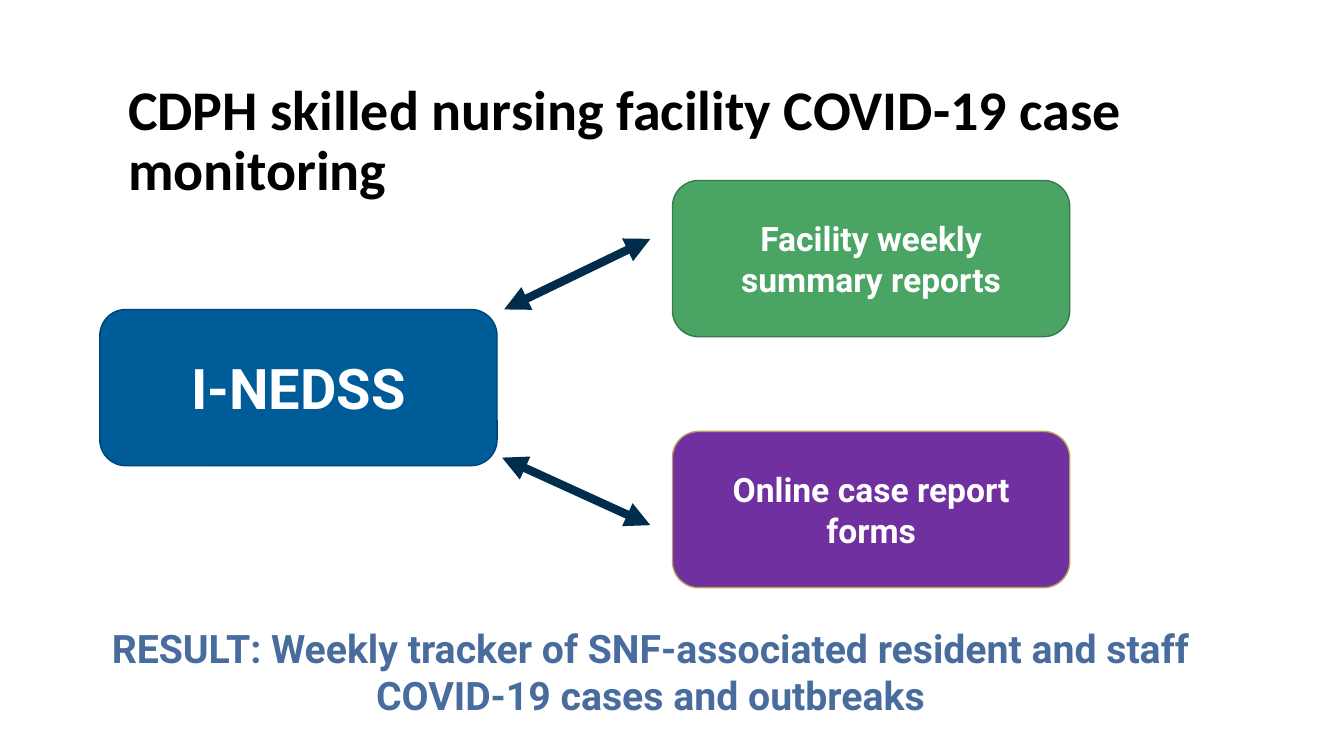
"""Build the nursing facility case monitoring slide."""
from dataclasses import dataclass

from lxml.etree import SubElement
from pptx import Presentation
from pptx.dml.color import RGBColor
from pptx.enum.shapes import MSO_CONNECTOR, MSO_SHAPE
from pptx.enum.text import MSO_ANCHOR, MSO_AUTO_SIZE, PP_ALIGN
from pptx.oxml.ns import qn
from pptx.slide import Slide
from pptx.text.text import TextFrame
from pptx.util import Inches, Pt

BOX_WIDTH, BOX_HEIGHT = 3.94, 1.55


@dataclass
class Box:
    text: str
    left: float
    top: float
    fill: str
    line: str
    size: int


@dataclass
class Arrow:
    x1: float
    y1: float
    x2: float
    y2: float


BOXES = [
    Box("I-NEDSS", 0.99, 3.07, "005B99", "004371", 40),
    Box("Facility weekly summary reports", 6.67, 1.79, "4AA564", "377A4A", 24),
    Box("Online case report forms", 6.67, 4.28, "7030A0", "B9A15F", 24),
]
ARROWS = [Arrow(5, 3.07, 6.45, 2.37), Arrow(4.98, 4.54, 6.45, 5.21)]


def color(value: str) -> RGBColor:
    return RGBColor.from_string(value)


def write(tf: TextFrame, text: str, size: int, font_color: str,
          font: str = "Roboto", align: PP_ALIGN = PP_ALIGN.CENTER,
          anchor: MSO_ANCHOR = MSO_ANCHOR.MIDDLE) -> None:
    tf.word_wrap = True
    tf.vertical_anchor = anchor
    p = tf.paragraphs[0]
    p.alignment = align
    r = p.add_run()
    r.text = text
    for name, value in {"name": font, "size": Pt(size), "bold": True}.items():
        setattr(r.font, name, value)
    r.font.color.rgb = color(font_color)


def add_title(s: Slide, text: str) -> None:
    sp = s.shapes.title
    place = {"left": 1.17, "top": 0.53, "width": 11, "height": 1.76}
    for name, value in place.items():
        setattr(sp, name, Inches(value))
    write(sp.text_frame, text, 40, "000000", "Calibri", PP_ALIGN.LEFT)
    sp.text_frame.auto_size = MSO_AUTO_SIZE.NONE
    sp.text_frame.paragraphs[0].line_spacing = 0.9


def add_box(s: Slide, box: Box) -> None:
    sp = s.shapes.add_shape(
        MSO_SHAPE.ROUNDED_RECTANGLE, Inches(box.left), Inches(box.top),
        Inches(BOX_WIDTH), Inches(BOX_HEIGHT))
    sp.shadow.inherit = False
    sp.fill.solid()
    sp.fill.fore_color.rgb = color(box.fill)
    sp.line.color.rgb = color(box.line)
    sp.line.width = Pt(1)
    write(sp.text_frame, box.text, box.size, "FFFFFF")


def add_arrow(s: Slide, arrow: Arrow) -> None:
    sp = s.shapes.add_connector(
        MSO_CONNECTOR.STRAIGHT, Inches(arrow.x1), Inches(arrow.y1),
        Inches(arrow.x2), Inches(arrow.y2))
    sp.line.color.rgb = color("002D4C")
    sp.line.width = Pt(6)
    ln = sp.line._get_or_add_ln()
    for end in ("a:headEnd", "a:tailEnd"):
        SubElement(ln, qn(end), type="triangle")
    SubElement(sp._element.spPr, qn("a:effectLst"))


def add_result(s: Slide, text: str) -> None:
    sp = s.shapes.add_textbox(Inches(0.6), Inches(6.14), Inches(11.7), Inches(1.04))
    write(sp.text_frame, text, 28, "486C9D", anchor=MSO_ANCHOR.TOP)
    sp.text_frame.auto_size = MSO_AUTO_SIZE.SHAPE_TO_FIT_TEXT


def main() -> None:
    prs = Presentation()
    prs.slide_width, prs.slide_height = Inches(13.33), Inches(7.5)
    s = prs.slides.add_slide(prs.slide_layouts[5])
    add_title(s, "CDPH skilled nursing facility COVID-19 case monitoring")
    for box in BOXES:
        add_box(s, box)
    for arrow in ARROWS:
        add_arrow(s, arrow)
    add_result(s, "RESULT: Weekly tracker of SNF-associated resident and staff "
                  "COVID-19 cases and outbreaks")
    prs.save("out.pptx")


if __name__ == "__main__":
    main()
